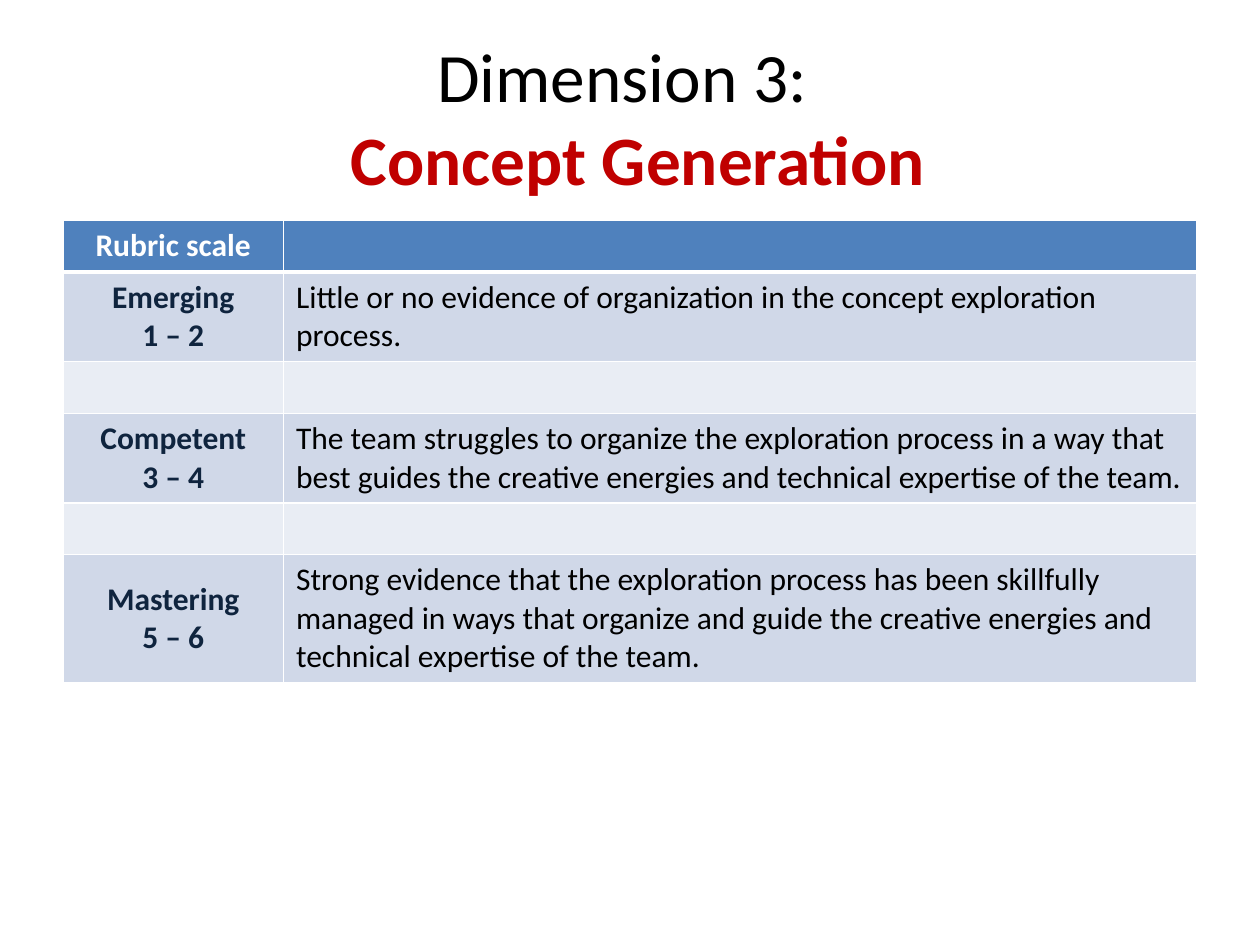
from lxml import etree
from pptx import Presentation
from pptx import util as u
from pptx.dml.color import RGBColor
from pptx.enum import text
from pptx.oxml.ns import qn

FONT = "Calibri"
LEVELS = [
    ("Emerging", "1 – 2",
     "Little or no evidence of organization in the concept exploration process.", 0.7),
    ("Competent", "3 – 4",
     "The team struggles to organize the exploration process in a way that best guides "
     "the creative energies and technical expertise of the team.", 0.7),
    ("Mastering", "5 – 6",
     "Strong evidence that the exploration process has been skillfully managed in ways "
     "that organize and guide the creative energies and technical expertise of the team.", 1.01),
]


def colour(code):
    """Turn a hex string into a colour."""
    return RGBColor.from_string(code)


def add_span(para, words, size, code, bold=False):
    """Add one formatted run to a paragraph."""
    span = para.add_run()
    span.text = words
    span.font.name = FONT
    span.font.size = u.Pt(size)
    span.font.bold = bold
    span.font.color.rgb = colour(code)


def style_cell(cell, fill, bottom=1):
    """Give a cell white borders and a plain fill."""
    properties = cell._tc.get_or_add_tcPr()
    for side, width in (("L", 1), ("R", 1), ("T", 1), ("B", bottom)):
        line = etree.SubElement(properties, qn(f"a:ln{side}"), w=str(u.Pt(width)))
        paint = etree.SubElement(line, qn("a:solidFill"))
        etree.SubElement(paint, qn("a:srgbClr"), val="FFFFFF")
    cell.fill.solid()
    cell.fill.fore_color.rgb = colour(fill)


def write_cell(cell, lines, code, bold=False, align=None):
    """Write each line as a paragraph of a cell."""
    frame = cell.text_frame
    for index, words in enumerate(lines):
        para = frame.add_paragraph() if index else frame.paragraphs[0]
        para.alignment = align
        add_span(para, words, 18, code, bold)


def place_title(page, left, top, width, height):
    """Place the two-line heading."""
    box = page.shapes.title
    box.left, box.top, box.width, box.height = map(u.Inches, (left, top, width, height))
    frame = box.text_frame
    frame.word_wrap = True
    frame.auto_size = text.MSO_AUTO_SIZE.NONE
    frame.vertical_anchor = text.MSO_ANCHOR.MIDDLE
    para = frame.paragraphs[0]
    para.alignment = text.PP_ALIGN.CENTER
    add_span(para, "Dimension 3: ", 39.6, "000000")
    para.add_line_break()
    add_span(para, " Concept Generation", 39.6, "C00000", True)


def place_rubric(page, left, top, width):
    """Place the rubric table, with a blank row between levels."""
    heights = [0.41]
    for level in LEVELS:
        heights += [level[-1], 0.41]
    heights.pop()
    box = page.shapes.add_table(len(heights), 2, *map(u.Inches, (left, top, width, sum(heights))))
    table = box.table
    label_width = 1.75
    table.columns[0].width = u.Inches(label_width)
    table.columns[1].width = u.Inches(width - label_width)
    for index, height in enumerate(heights):
        table.rows[index].height = u.Inches(height)
        fill = "4F81BD" if index == 0 else "D0D8E8" if index % 2 else "E9EDF4"
        for cell in table.rows[index].cells:
            style_cell(cell, fill, 1 if index else 3)
    center = text.PP_ALIGN.CENTER
    write_cell(table.cell(0, 0), ["Rubric scale"], "FFFFFF", True, center)
    for index, (name, score, description, _) in enumerate(LEVELS):
        row = 2 * index + 1
        label = table.cell(row, 0)
        label.vertical_anchor = text.MSO_ANCHOR.MIDDLE
        write_cell(label, [name, score], "0F243E", True, center)
        write_cell(table.cell(row, 1), [description], "000000")


def main():
    """Build and save the slide."""
    deck = Presentation()
    deck.slide_width, deck.slide_height = u.Inches(10), u.Inches(7.5)
    page = deck.slides.add_slide(deck.slide_layouts[5])
    place_title(page, 0.5, 0.3, 9, 1.25)
    place_rubric(page, 0.5, 1.75, 9)
    deck.save("out.pptx")


if __name__ == "__main__":
    main()
